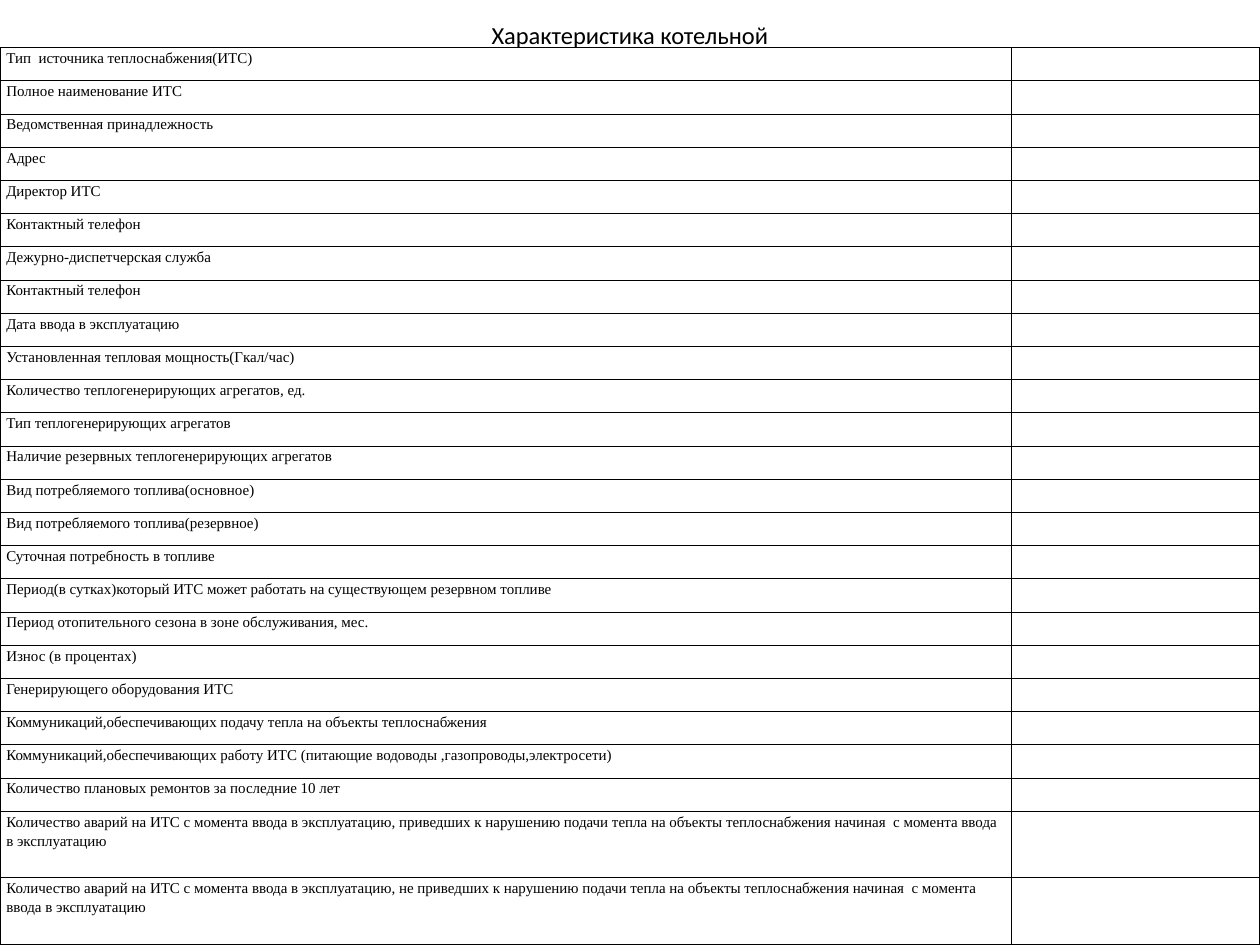
from lxml.etree import SubElement
from pptx import Presentation
from pptx.dml.color import RGBColor
from pptx.enum.text import MSO_ANCHOR, PP_ALIGN
from pptx.oxml.ns import qn
from pptx.util import Inches, Pt

BLACK = RGBColor(0x00, 0x00, 0x00)
WIDTH, HEIGHT = Inches(14), Inches(10.5)
TABLE_TOP = Inches(0.53)
LABEL_SHARE = 0.803
TITLE = "Характеристика котельной"
SINGLE_ROWS = [
    "Тип  источника теплоснабжения(ИТС)",
    "Полное наименование ИТС",
    "Ведомственная принадлежность",
    "Адрес",
    "Директор ИТС",
    "Контактный телефон",
    "Дежурно-диспетчерская служба",
    "Контактный телефон",
    "Дата ввода в эксплуатацию",
    "Установленная тепловая мощность(Гкал/час)",
    "Количество теплогенерирующих агрегатов, ед.",
    "Тип теплогенерирующих агрегатов",
    "Наличие резервных теплогенерирующих агрегатов",
    "Вид потребляемого топлива(основное)",
    "Вид потребляемого топлива(резервное)",
    "Суточная потребность в топливе",
    "Период(в сутках)который ИТС может работать на существующем резервном топливе",
    "Период отопительного сезона в зоне обслуживания, мес.",
    "Износ (в процентах)",
    "Генерирующего оборудования ИТС",
    "Коммуникаций,обеспечивающих подачу тепла на объекты теплоснабжения",
    "Коммуникаций,обеспечивающих работу ИТС (питающие водоводы ,газопроводы,электросети)",
    "Количество плановых ремонтов за последние 10 лет",
]
DOUBLE_ROWS = [
    f"Количество аварий на ИТС с момента ввода в эксплуатацию, {outcome} к нарушению "
    "подачи тепла на объекты теплоснабжения начиная  с момента ввода в эксплуатацию"
    for outcome in ("приведших", "не приведших")
]


def set_font(p, name, size):
    p.font.name, p.font.size = name, Pt(size)
    p.font.color.rgb = BLACK


def add_title(slide):
    tf = slide.shapes.add_textbox(0, 0, WIDTH, Inches(0.77)).text_frame
    tf.word_wrap = True
    tf.vertical_anchor = MSO_ANCHOR.MIDDLE
    p = tf.paragraphs[0]
    p.text = TITLE
    p.alignment = PP_ALIGN.CENTER
    set_font(p, "Calibri", 19.6)


def add_borders(cell):
    """Draw a thin black line on all four sides, placed before the fill."""
    tc_pr = cell._tc.get_or_add_tcPr()
    for i, side in enumerate(("a:lnL", "a:lnR", "a:lnT", "a:lnB")):
        ln = SubElement(tc_pr, qn(side), w=str(Pt(1)))
        fill = SubElement(ln, qn("a:solidFill"))
        SubElement(fill, qn("a:srgbClr"), val=str(BLACK))
        tc_pr.insert(i, ln)


def fill_cell(cell, text):
    cell.fill.background()
    cell.margin_left = cell.margin_right = Inches(0.07)
    cell.margin_top = cell.margin_bottom = 0
    p = cell.text_frame.paragraphs[0]
    p.text = text
    p.line_spacing = 1.15
    set_font(p, "Times New Roman", 12)
    add_borders(cell)


def add_characteristics(slide):
    labels = SINGLE_ROWS + DOUBLE_ROWS
    height = HEIGHT - TABLE_TOP
    unit = height // (len(SINGLE_ROWS) + 2 * len(DOUBLE_ROWS))
    table = slide.shapes.add_table(len(labels), 2, 0, TABLE_TOP, WIDTH, height).table
    table.first_row = table.horz_banding = False
    table.columns[0].width = int(WIDTH * LABEL_SHARE)
    table.columns[1].width = WIDTH - table.columns[0].width
    for i, label in enumerate(labels):
        table.rows[i].height = unit if i < len(SINGLE_ROWS) else 2 * unit
        fill_cell(table.cell(i, 0), label)
        fill_cell(table.cell(i, 1), "")


def main():
    prs = Presentation()
    prs.slide_width, prs.slide_height = WIDTH, HEIGHT
    slide = prs.slides.add_slide(prs.slide_layouts[6])
    add_title(slide)
    add_characteristics(slide)
    prs.save("out.pptx")


if __name__ == "__main__":
    main()
